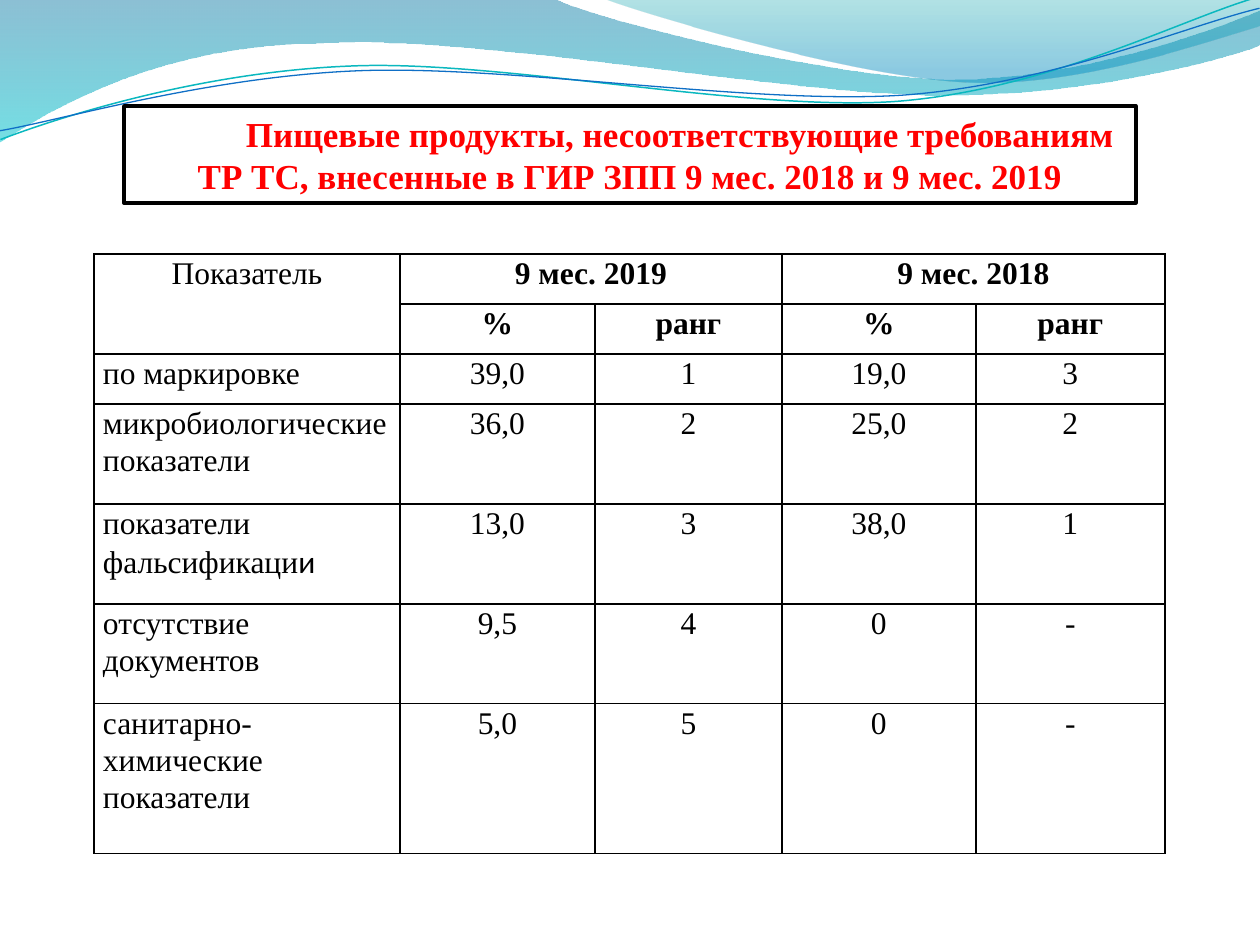
from lxml import etree
from pptx import Presentation
from pptx.dml.color import RGBColor
from pptx.enum.shapes import MSO_SHAPE
from pptx.enum.text import MSO_ANCHOR, MSO_AUTO_SIZE, PP_ALIGN
from pptx.oxml import parse_xml
from pptx.oxml.ns import nsdecls, qn
from pptx.util import Pt

PX = 914400 // 126
CENTER, JUSTIFY = PP_ALIGN.CENTER, PP_ALIGN.JUSTIFY
TOP = MSO_ANCHOR.TOP
FIT = MSO_AUTO_SIZE.SHAPE_TO_FIT_TEXT
RECT = MSO_SHAPE.RECTANGLE
SERIF, SANS = "Times New Roman", "Calibri"
COLORS = {
    "black": "000000", "red": "FF0000", "deep": "0074A1", "aqua": "00C6CF",
    "teal": "00A1A9", "sea": "008BBF", "teal_line": "0AB8BF", "blue_line": "0F6FC6",
}
LINE_TILT = 357.3

BROAD_WAVE = [(0, -1), (554, -1), (600, 21, 837, 79, 955, 79), (1075, 79, 1207, 33, 1260, 11),
              (1261, 45), (1239, 55, 1096, 96, 940, 95), (784, 95, 481, 35, 324, 43),
              (163, 44, 58, 105, -1, 142), (0, -1)]
RIGHT_WAVE = [(604, -1), (641, 14, 859, 78, 969, 82), (1079, 87, 1211, 40, 1260, 26),
              (1260, 0), (604, -1)]
TEAL_LINE = [(-2, 110), (59, 90, 200, 52, 350, 53), (499, 53, 745, 118, 896, 114),
             (1049, 109, 1184, 45, 1260, 27)]
BLUE_LINE = [(-2, 101), (57, 94, 207, 57, 358, 58), (509, 59, 751, 111, 902, 108),
             (1052, 104, 1188, 52, 1262, 38)]

TITLE = "Пищевые продукты, несоответствующие требованиям ТР ТС, внесенные в ГИР ЗПП 9 мес. 2018 и 9 мес. 2019"
COL_WIDTHS = [306, 195, 187, 194, 189]
ROW_HEIGHTS = [50, 50, 50, 100, 100, 100, 150]
ROWS = [
    ["Показатель", "9 мес. 2019", "", "9 мес. 2018", ""],
    ["", "%", "ранг", "%", "ранг"],
    ["по маркировке", "39,0", "1", "19,0", "3"],
    ["микробиологические показатели", "36,0", "2", "25,0", "2"],
    [[("показатели фальсификаци", SERIF), ("и", SANS)], "13,0", "3", "38,0", "1"],
    ["отсутствие документов", "9,5", "4", "0", "-"],
    ["санитарно-химические показатели", "5,0", "5", "0", "-"],
]
MERGES = [(0, 0, 1, 0), (0, 1, 0, 2), (0, 3, 0, 4)]


def rgb(name):
    """Return the named colour."""
    return RGBColor.from_string(COLORS[name])


def add_text(tf, text, size=18, color="black", bold=False, align=CENTER, spacing=None, indent=0):
    """Write one paragraph from a string or from (text, font) runs."""
    p = tf.paragraphs[0]
    p.alignment = align
    p.line_spacing = spacing
    if indent:
        p._p.get_or_add_pPr().set("indent", str(indent * PX))
    for part, font in [(text, SERIF)] if isinstance(text, str) else text:
        r = p.add_run()
        r.text = part
        r.font.name, r.font.size, r.font.bold = font, Pt(size), bold
        r.font.color.rgb = rgb(color)


def add_outline(slide, box, outline, close):
    """Draw an outline whose two-number steps are lines and six-number steps are curves."""
    left, top = box[:2]
    points = [((left + step[i]) * PX, (top + step[i + 1]) * PX)
              for step in outline for i in range(0, len(step), 2)]
    builder = slide.shapes.build_freeform(*points[0], scale=1.0)
    builder.add_line_segments(points[1:], close=close)
    sp = builder.convert_to_shape()
    sp.shadow.inherit = False
    lines = sp._element.spPr.findall(".//" + qn("a:lnTo"))
    for step in outline[1:]:
        first, *rest = [lines.pop(0) for _ in range(len(step) // 2)]
        if rest:
            first.tag = qn("a:cubicBezTo")
        for line in rest:
            first.append(line[0])
            line.getparent().remove(line)
    return sp


def add_wave(slide, box, outline, stops):
    """Draw a wave with a translucent downward gradient."""
    sp = add_outline(slide, box, outline, True)
    sp.line.fill.background()
    sp.fill.gradient()
    sp.fill.gradient_angle = 270
    for stop, (position, color, _) in zip(sp.fill.gradient_stops, stops):
        stop.position = position
        stop.color.rgb = rgb(color)
    for clr, (_, _, opacity) in zip(sp._element.spPr.iter(qn("a:srgbClr")), stops):
        etree.SubElement(clr, qn("a:alpha")).set("val", str(opacity * 1000))


def add_wave_line(slide, box, outline, color, width):
    """Draw a thin flowing line, slightly tilted."""
    sp = add_outline(slide, box, outline, False)
    sp.rotation = LINE_TILT
    sp.fill.background()
    sp.line.color.rgb = rgb(color)
    sp.line.width = Pt(width)


def add_header_waves(slide, box):
    """Draw the waves at the top of the slide."""
    add_wave(slide, box, BROAD_WAVE, [(0, "deep", 45), (1, "aqua", 55)])
    add_wave(slide, box, RIGHT_WAVE, [(0, "teal", 30), (0.8, "sea", 45)])
    add_wave_line(slide, box, TEAL_LINE, "teal_line", 0.85)
    add_wave_line(slide, box, BLUE_LINE, "blue_line", 0.75)


def add_title(slide, box):
    """Draw the framed title."""
    sp = slide.shapes.add_shape(RECT, *(v * PX for v in box))
    sp.shadow.inherit = False
    sp.fill.background()
    sp.line.color.rgb = rgb("black")
    sp.line.width = Pt(2)
    tf = sp.text_frame
    tf.word_wrap = True
    tf.auto_size = FIT
    tf.vertical_anchor = TOP
    add_text(tf, TITLE, size=20, color="red", bold=True, indent=100)


def add_borders(cell):
    """Give a cell a thin black line on every side."""
    tc_pr = cell._tc.get_or_add_tcPr()
    for side in ("lnL", "lnR", "lnT", "lnB"):
        tc_pr.append(parse_xml(
            f'<a:{side} {nsdecls("a")} w="{Pt(1)}"><a:solidFill>'
            f'<a:srgbClr val="{COLORS["black"]}"/></a:solidFill></a:{side}>'))


def add_indicator_table(slide, box):
    """Draw the table of indicators, shares and ranks."""
    frame = slide.shapes.add_table(len(ROWS), len(COL_WIDTHS), *(v * PX for v in box))
    table = frame.table
    table.first_row = table.horz_banding = False
    for column, width in zip(table.columns, COL_WIDTHS):
        column.width = width * PX
    for row, height in zip(table.rows, ROW_HEIGHTS):
        row.height = height * PX
    for i, row in enumerate(ROWS):
        for j, text in enumerate(row):
            cell = table.cell(i, j)
            add_borders(cell)
            cell.fill.background()
            cell.margin_left = cell.margin_right = 9 * PX
            cell.margin_top = cell.margin_bottom = 0
            cell.vertical_anchor = TOP
            if text:
                add_text(cell.text_frame, text, bold=i < 2 and j > 0, spacing=1.07,
                         align=JUSTIFY if i > 1 and j == 0 else CENTER)
    for top, left, bottom, right in MERGES:
        table.cell(top, left).merge(table.cell(bottom, right))


def main():
    """Build the slide and save it."""
    prs = Presentation()
    prs.slide_width, prs.slide_height = 1260 * PX, 945 * PX
    slide = prs.slides.add_slide(prs.slide_layouts[6])
    add_header_waves(slide, (0, 0, 1260, 142))
    add_title(slide, (124, 106, 1012, 97))
    add_indicator_table(slide, (94, 254, sum(COL_WIDTHS), sum(ROW_HEIGHTS)))
    prs.save("out.pptx")


if __name__ == "__main__":
    main()
